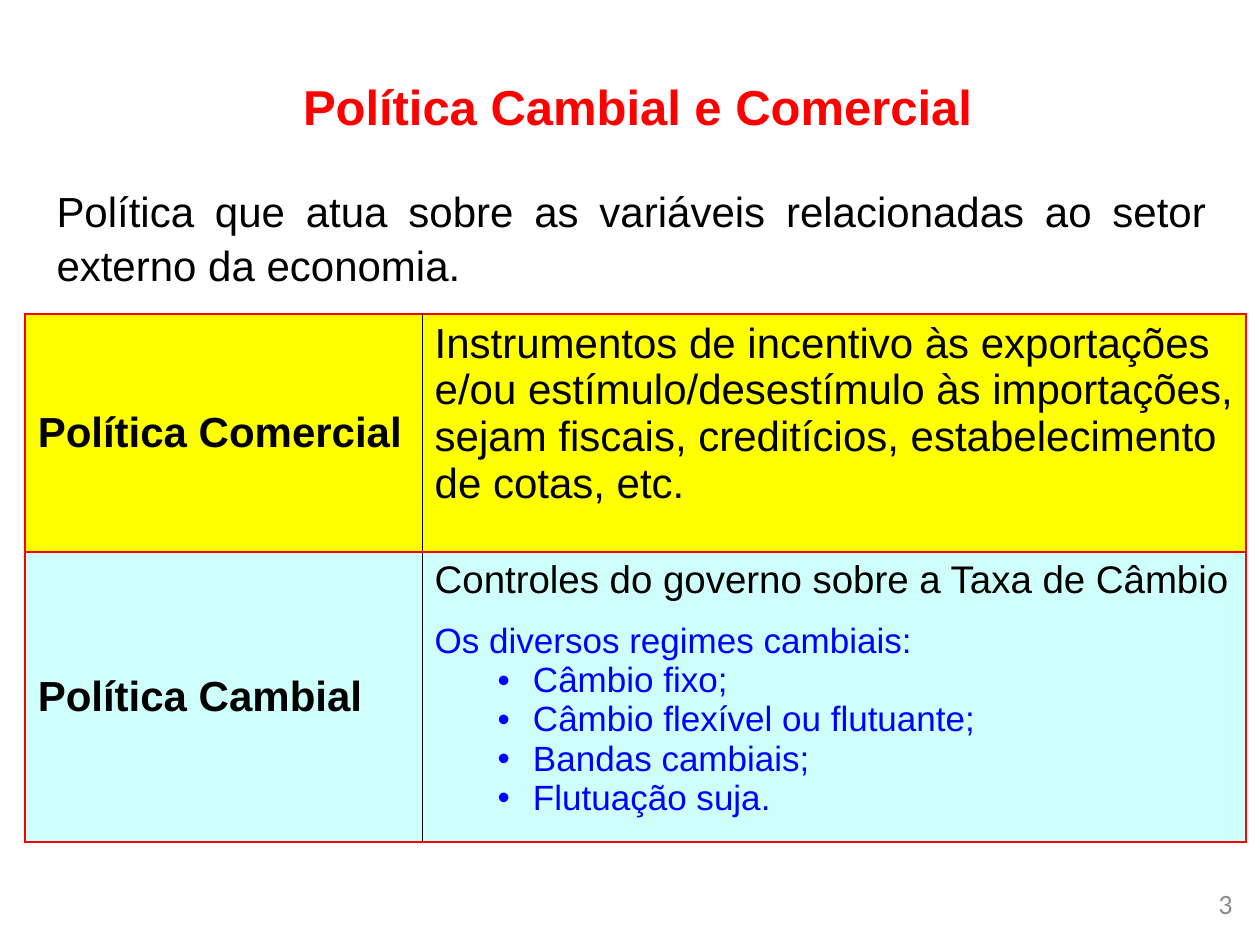
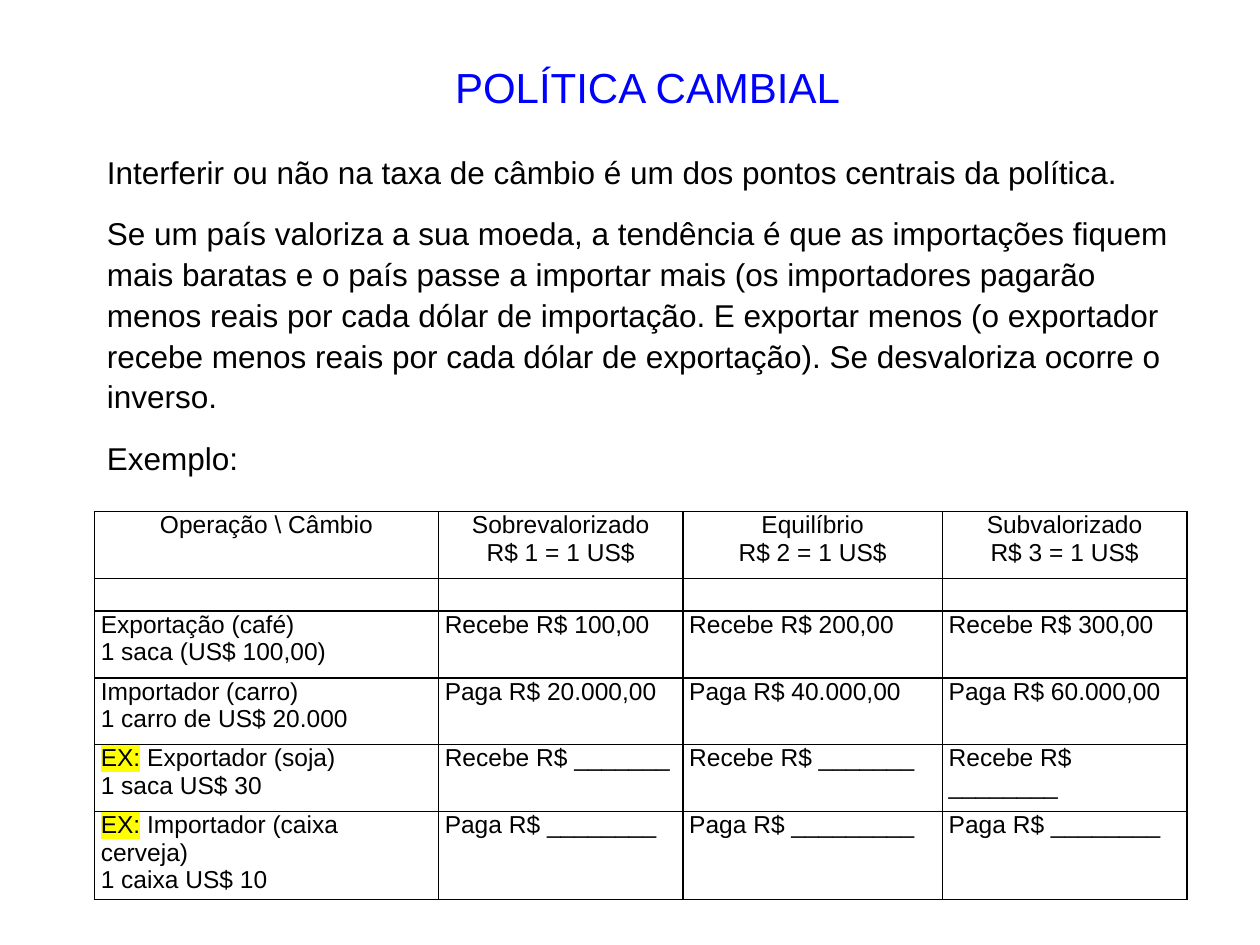
from dataclasses import dataclass

from lxml import etree
from pptx import Presentation
from pptx.dml.color import RGBColor
from pptx.enum.text import MSO_ANCHOR, PP_ALIGN
from pptx.oxml.ns import qn
from pptx.util import Pt

PX = 9144  # EMU in one px, 100 px to the inch
LEFT, CENTER, RIGHT, JUSTIFY = PP_ALIGN.LEFT, PP_ALIGN.CENTER, PP_ALIGN.RIGHT, PP_ALIGN.JUSTIFY
TOP, MIDDLE = MSO_ANCHOR.TOP, MSO_ANCHOR.MIDDLE


@dataclass(frozen=True)
class Theme:
    font: str = "Arial"
    number_font: str = "Calibri"
    black: str = "000000"
    red: str = "FF0000"
    blue: str = "0000FF"
    yellow: str = "FFFF00"
    aqua: str = "CFFFFA"
    gray: str = "8C8C8C"
    title: int = 28
    large: int = 24
    control: int = 22
    regime: int = 20
    body: int = 18
    number: int = 16
    grid: int = 14
    box_spacing: float = 1.08


T = Theme()


def add_text(tf, text, size, color=T.black, bold=False, align=LEFT, after=0,
             spacing=1.0, font=T.font, marked=""):
    """Add a paragraph to tf; the leading part in marked is highlighted."""
    p = tf.paragraphs[0]
    if p.runs:
        p = tf.add_paragraph()
    p.alignment, p.line_spacing, p.space_after = align, spacing, Pt(after)
    for part in (marked, text):
        if not part:
            continue
        r = p.add_run()
        r.text = part
        r.font.size, r.font.bold, r.font.name = Pt(size), bold, font
        r.font.color.rgb = RGBColor.from_string(color)
        if part == marked:
            hl = etree.Element(qn("a:highlight"))
            etree.SubElement(hl, qn("a:srgbClr"), val=T.yellow)
            r.font._element.find(qn("a:latin")).addprevious(hl)
    return p


def set_borders(cell, left, right, top, bottom):
    """Draw the four edges of a cell, each a (colour, points) pair."""
    tcPr = cell._tc.get_or_add_tcPr()
    edges = {"a:lnL": left, "a:lnR": right, "a:lnT": top, "a:lnB": bottom}
    for i, (tag, (color, width)) in enumerate(edges.items()):
        ln = etree.Element(qn(tag), w=str(Pt(width)))
        fill = etree.SubElement(ln, qn("a:solidFill"))
        etree.SubElement(fill, qn("a:srgbClr"), val=color)
        tcPr.insert(i, ln)


prs = Presentation()
prs.slide_width, prs.slide_height = 1000 * PX, 750 * PX
blank = prs.slide_layouts[6]
policies, exchange = [prs.slides.add_slide(blank) for _ in range(2)]

# Text boxes of both slides
frames = []
for slide, box, anchor in (
    (policies, (755, 697, 233, 40), MIDDLE),
    (policies, (35, 139, 932, 91), TOP),
    (policies, (48, 52, 916, 57), TOP),
    (exchange, (75, 49, 878, 326), MIDDLE),
):
    tf = slide.shapes.add_textbox(*[n * PX for n in box]).text_frame
    tf.word_wrap, tf.vertical_anchor = True, anchor
    frames.append(tf)
number, intro, heading, explanation = frames

add_text(number, "3", T.number, T.gray, align=RIGHT, font=T.number_font)
add_text(intro, "Política que atua sobre as variáveis relacionadas ao setor externo da economia.",
         T.large, align=JUSTIFY, spacing=T.box_spacing)
add_text(heading, "Política Cambial e Comercial", T.title, T.red, bold=True,
         align=CENTER, spacing=T.box_spacing)

add_text(explanation, "POLÍTICA CAMBIAL", T.large, T.blue, align=CENTER, after=21.7,
         spacing=T.box_spacing)
for text, after in (
    ("Interferir ou não na taxa de câmbio é um dos pontos centrais da política.", 12),
    ("Se um país valoriza a sua moeda, a tendência é que as importações fiquem mais baratas "
     "e o país passe a importar mais (os importadores pagarão menos reais por cada dólar de "
     "importação. E exportar menos (o exportador recebe menos reais por cada dólar de "
     "exportação). Se desvaloriza ocorre o inverso.", 12),
    ("Exemplo:", 0),
):
    add_text(explanation, text, T.body, after=after, spacing=T.box_spacing)

# Empty tables with their column widths and row heights
tables = []
for slide, left, top, widths, heights in (
    (policies, 20, 249, (315, 654), (189, 230)),
    (exchange, 75, 406, (273, 194, 206, 194), (53, 26, 53, 53, 53, 53)),
):
    table = slide.shapes.add_table(len(heights), len(widths), left * PX, top * PX,
                                   sum(widths) * PX, sum(heights) * PX).table
    table.first_row = table.horz_banding = False
    for column, width in zip(table.columns, widths):
        column.width = width * PX
    for row, height in zip(table.rows, heights):
        row.height = height * PX
    tables.append(table)
policy_table, rate_table = tables

# The two policies
red_edge, divider = (T.red, 1), (T.black, 0.5)
for row, (name, color) in enumerate((("Política Comercial", T.yellow),
                                     ("Política Cambial", T.aqua))):
    label, detail = policy_table.cell(row, 0), policy_table.cell(row, 1)
    for cell in (label, detail):
        cell.fill.solid()
        cell.fill.fore_color.rgb = RGBColor.from_string(color)
    set_borders(label, red_edge, divider, red_edge, red_edge)
    set_borders(detail, divider, red_edge, red_edge, red_edge)
    label.vertical_anchor = MIDDLE
    add_text(label.text_frame, name, T.large, bold=True)

add_text(policy_table.cell(0, 1).text_frame,
         "Instrumentos de incentivo às exportações e/ou estímulo/desestímulo às importações, "
         "sejam fiscais, creditícios, estabelecimento de cotas, etc.", T.large)
tf = policy_table.cell(1, 1).text_frame
add_text(tf, "Controles do governo sobre a Taxa de Câmbio", T.control, after=12)
add_text(tf, "Os diversos regimes cambiais:", T.regime, T.blue)
for regime in ("Câmbio fixo;", "Câmbio flexível ou flutuante;", "Bandas cambiais;",
               "Flutuação suja."):
    p = add_text(tf, regime, T.regime, T.blue)
    p.level = 1
    pPr = p._p.get_or_add_pPr()
    pPr.set("marL", str(78 * PX))
    pPr.set("indent", str(-28 * PX))
    etree.SubElement(pPr, qn("a:buFont"), typeface=T.font)
    etree.SubElement(pPr, qn("a:buChar"), char="•")

# Effect of the exchange rate on each operation
rate_rows = (
    ("Operação \\ Câmbio", "Sobrevalorizado\nR$ 1 = 1 US$", "Equilíbrio\nR$ 2 = 1 US$",
     "Subvalorizado\nR$ 3 = 1 US$"),
    ("", "", "", ""),
    ("Exportação (café)\n1 saca (US$ 100,00)", "Recebe R$ 100,00", "Recebe R$ 200,00",
     "Recebe R$ 300,00"),
    ("Importador (carro)\n1 carro de US$ 20.000", "Paga R$ 20.000,00", "Paga R$ 40.000,00",
     "Paga R$ 60.000,00"),
    ("EX: Exportador (soja)\n1 saca US$ 30", "Recebe R$ _______", "Recebe R$ _______",
     "Recebe R$ ________"),
    ("EX: Importador (caixa cerveja)\n1 caixa US$ 10", "Paga R$ ________",
     "Paga R$ _________", "Paga R$ ________"),
)
black_edge = (T.black, 1)
for row, texts in enumerate(rate_rows):
    for col, text in enumerate(texts):
        cell = rate_table.cell(row, col)
        cell.fill.background()
        set_borders(cell, *[black_edge] * 4)
        cell.margin_left = cell.margin_right = 5 * PX
        cell.margin_top = cell.margin_bottom = 0
        tf = cell.text_frame
        if not text:
            tf.paragraphs[0]._p.get_or_add_endParaRPr().set("sz", str(T.grid * 100))
            continue
        for line in text.split("\n"):
            marked = "EX:" if line.startswith("EX:") else ""
            add_text(tf, line.removeprefix(marked), T.grid,
                     align=LEFT if row else CENTER, marked=marked)

prs.save("out.pptx")
